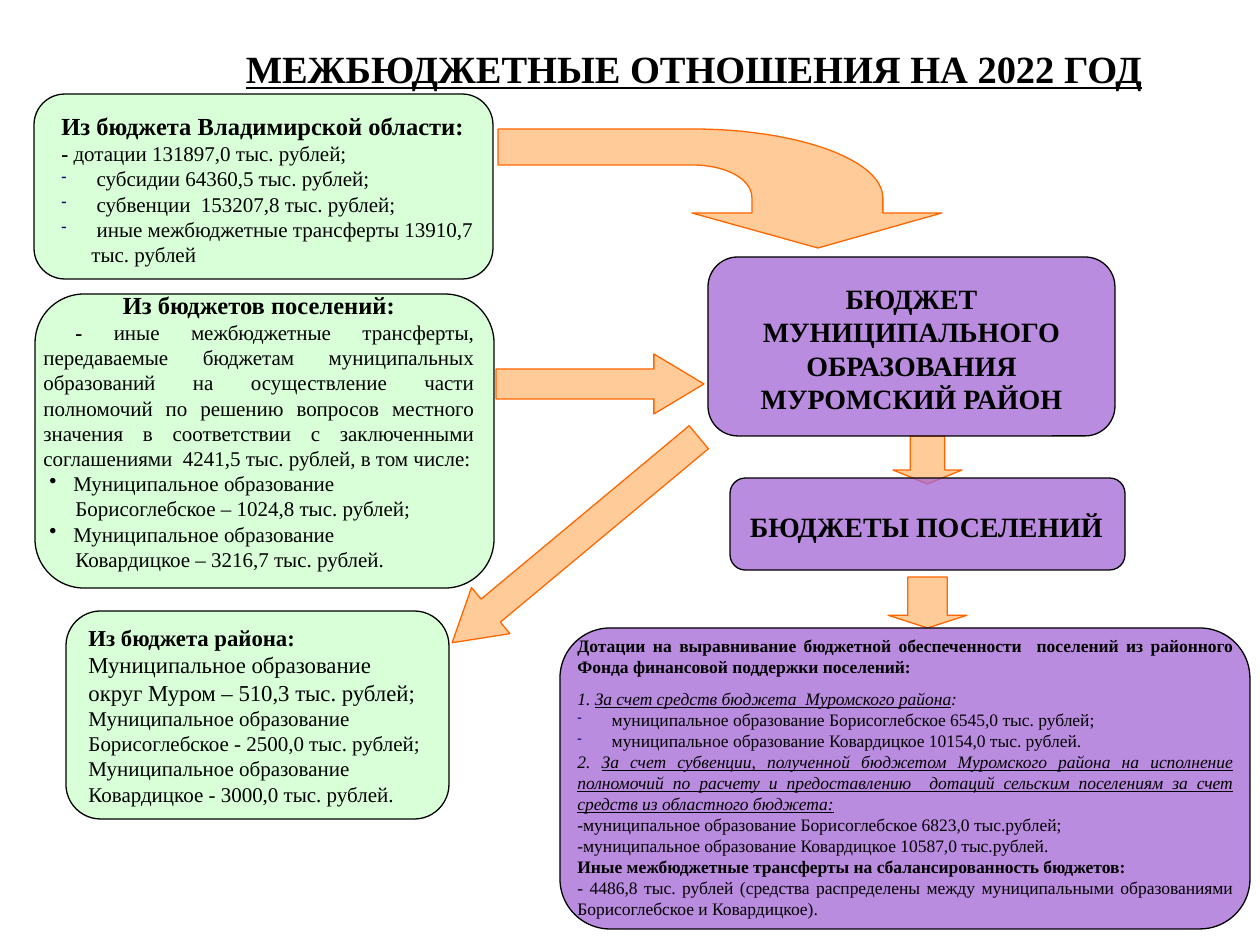
from dataclasses import dataclass
from lxml.etree import SubElement
from pptx import Presentation
from pptx.dml.color import RGBColor
from pptx.enum.shapes import MSO_SHAPE
from pptx.enum.text import MSO_ANCHOR, PP_ALIGN
from pptx.oxml.ns import qn
from pptx.util import Pt

PX = 914400 / 126  # EMU in one px


@dataclass(frozen=True)
class Theme:
    face: str = "Times New Roman"
    ink: str = "000000"
    green: str = "CCFFCC"
    violet: str = "A265D5"
    peach: str = "FFCC99"
    orange: str = "FF6600"
    mark: str = "00007D"
    title: int = 22
    main: int = 16
    head: int = 14
    sub: int = 13
    body: int = 12
    small: int = 10


T = Theme()
LEFT, MID, JUST = PP_ALIGN.LEFT, PP_ALIGN.CENTER, PP_ALIGN.JUSTIFY


@dataclass(frozen=True)
class Para:
    text: object  # a string, or (text, style) pairs
    size: int = T.body
    style: str = ""  # letters b, i, u
    align: object = LEFT
    margin: int = 0
    indent: int = 0
    bullet: str = ""
    before: int = 0


def px(n):
    return round(n * PX)


def rgb(code):
    return RGBColor.from_string(code)


def paint(shape, fill, line, alpha=100):
    shape.shadow.inherit = False
    shape.fill.solid()
    shape.fill.fore_color.rgb = rgb(fill)
    if alpha < 100:
        color = shape.fill._xPr.find(qn("a:solidFill"))[0]
        SubElement(color, qn("a:alpha")).set("val", str(alpha * 1000))
    shape.line.color.rgb = rgb(line)
    shape.line.width = Pt(0.75)


def mark(font, style):
    font.bold, font.italic, font.underline = (c in style for c in "biu")


def put_bullet(props, sign):
    if sign == "-":
        color = SubElement(props, qn("a:buClr"))
        SubElement(color, qn("a:srgbClr")).set("val", T.mark)
        SubElement(props, qn("a:buSzPct")).set("val", "75000")
    SubElement(props, qn("a:buChar")).set("char", sign)


def write(frame, paras):
    frame.word_wrap = True
    for n, item in enumerate(paras):
        par = frame.add_paragraph() if n else frame.paragraphs[0]
        props = par._p.get_or_add_pPr()
        props.set("marL", str(px(item.margin)))
        props.set("indent", str(px(item.indent)))
        if item.bullet:
            put_bullet(props, item.bullet)
        par.alignment = item.align
        if item.before:
            par.space_before = Pt(item.before)
        font = par.font
        font.name, font.size = T.face, Pt(item.size)
        font.color.rgb = rgb(T.ink)
        if isinstance(item.text, str):
            mark(font, item.style)
            par.add_run().text = item.text
            continue
        for text, style in item.text:
            run = par.add_run()
            run.text = text
            mark(run.font, style)


def add_text(slide, box, paras, anchor=MSO_ANCHOR.TOP):
    frame = slide.shapes.add_textbox(*map(px, box)).text_frame
    frame.vertical_anchor = anchor
    write(frame, paras)


def add_card(slide, box, fill):
    card = slide.shapes.add_shape(MSO_SHAPE.FLOWCHART_ALTERNATE_PROCESS, *map(px, box))
    paint(card, fill, T.ink, 74)
    return card


def add_arrow(slide, kind, box, head, turn=0):
    arrow = slide.shapes.add_shape(kind, *map(px, box))
    arrow.adjustments[0], arrow.adjustments[1] = 0.5, head
    arrow.rotation = turn
    paint(arrow, T.peach, T.orange)


def curve(a, b, c, d, steps=24):
    """Points of a cubic Bezier curve, after its start."""
    for n in range(1, steps + 1):
        t = n / steps
        s = 1 - t
        yield tuple(s**3 * i + 3 * s * s * t * j + 3 * s * t * t * k + t**3 * m
                    for i, j, k, m in zip(a, b, c, d))


def add_bend(slide):
    points = [(942, 213), (883, 213), (883, 198),
              *curve((883, 198), (883, 160), (798, 129), (692, 129)),
              (498, 129), (498, 165), (692, 165),
              *curve((692, 165), (726, 165), (752, 179), (752, 198)),
              (752, 213), (692, 213)]
    pen = slide.shapes.build_freeform(px(818), px(248))
    pen.add_line_segments([(px(x), px(y)) for x, y in points], close=True)
    paint(pen.convert_to_shape(), T.peach, T.orange)


def dash(text, **look):
    return Para(text, margin=30, indent=-30, bullet="-", **look)


def fine(text, style="", **look):
    return Para(text, T.small, style, JUST, **look)


def town(name, total):
    return [Para("Муниципальное образование", align=JUST, margin=30, indent=-24, bullet="•"),
            Para(f"{name} – {total} тыс. рублей", align=JUST, margin=32)]


def main():
    deck = Presentation()
    deck.slide_width, deck.slide_height = px(1260), px(945)
    slide = deck.slides.add_slide(deck.slide_layouts[6])

    # Arrows
    add_bend(slide)
    right, down = MSO_SHAPE.RIGHT_ARROW, MSO_SHAPE.DOWN_ARROW
    add_arrow(slide, right, (496, 354, 208, 60), 0.835)
    add_arrow(slide, right, (415, 510, 321, 60), 0.835, 140.2)
    add_arrow(slide, down, (893, 436, 69, 48), 0.29)
    add_arrow(slide, down, (888, 577, 79, 51), 0.25)

    # Cards
    for box in ((34, 94, 459, 185), (35, 294, 459, 294)):
        add_card(slide, box, T.green)
    for box in ((708, 257, 407, 179), (730, 478, 395, 92), (560, 628, 690, 301)):
        add_card(slide, box, T.violet)
    local = add_card(slide, (66, 611, 383, 208), T.green)

    # Title
    add_text(slide, (127, 32, 1134, 73),
             [Para("МЕЖБЮДЖЕТНЫЕ ОТНОШЕНИЯ НА 2022 ГОД", T.title, "bu", MID)],
             MSO_ANCHOR.MIDDLE)

    # Sources of funds
    add_text(slide, (49, 105, 442, 170), [
        Para("Из бюджета Владимирской области:", T.head, "b"),
        Para([("-", "b"), (" дотации 131897,0 тыс. рублей;", "")]),
        dash(" субсидии 64360,5 тыс. рублей;"),
        dash(" субвенции  153207,8 тыс. рублей;"),
        dash(" иные межбюджетные трансферты 13910,7 тыс. рублей"),
    ])
    first, second = town("Борисоглебское", "1024,8"), town("Ковардицкое", "3216,7")
    first[1] = Para(first[1].text + ";", align=JUST, margin=32)
    second[1] = Para(second[1].text + ".", align=JUST, margin=32)
    add_text(slide, (31, 284, 456, 297), [
        Para("Из бюджетов поселений:", T.head, "b", MID),
        Para([("-", "b"), (" иные межбюджетные трансферты, передаваемые бюджетам "
              "муниципальных образований на осуществление части полномочий по решению "
              "вопросов местного значения в соответствии с заключенными соглашениями  "
              "4241,5 тыс. рублей, в том числе:", "")], align=JUST, indent=32),
        *first, *second,
    ])
    frame = local.text_frame
    frame.margin_right = 0
    frame.vertical_anchor = MSO_ANCHOR.MIDDLE
    write(frame, [
        Para("Из бюджета района:", T.sub, "b"),
        Para("Муниципальное образование", T.sub),
        Para("округ Муром – 510,3 тыс. рублей;", T.sub),
        Para("Муниципальное образование"),
        Para("Борисоглебское - 2500,0 тыс. рублей;"),
        Para("Муниципальное образование"),
        Para("Ковардицкое - 3000,0 тыс. рублей."),
    ])

    # Budgets that receive them
    add_text(slide, (723, 275, 377, 139), [
        Para("БЮДЖЕТ МУНИЦИПАЛЬНОГО ОБРАЗОВАНИЯ МУРОМСКИЙ РАЙОН", T.main, "b", MID)])
    add_text(slide, (733, 503, 387, 44), [Para("БЮДЖЕТЫ ПОСЕЛЕНИЙ", T.main, "b", MID)])
    add_text(slide, (565, 629, 680, 316), [
        fine("Дотации на выравнивание бюджетной обеспеченности  поселений из районного "
             "Фонда финансовой поддержки поселений:", "b"),
        fine([("1. ", "i"), ("За счет средств бюджета  Муромского района", "iu"),
              (":", "i")], before=6),
        dash(" муниципальное образование Борисоглебское 6545,0 тыс. рублей;",
             size=T.small, align=JUST),
        dash(" муниципальное образование Ковардицкое 10154,0 тыс. рублей.",
             size=T.small, align=JUST),
        fine([("2. ", "i"), ("За счет субвенции, полученной бюджетом Муромского района на "
              "исполнение полномочий по расчету и предоставлению  дотаций сельским "
              "поселениям за счет средств из областного бюджета:", "iu")]),
        fine("-муниципальное образование Борисоглебское 6823,0 тыс.рублей;"),
        fine("-муниципальное образование Ковардицкое 10587,0 тыс.рублей."),
        fine("Иные межбюджетные трансферты на сбалансированность бюджетов:", "b"),
        fine("- 4486,8 тыс. рублей (средства распределены между муниципальными "
             "образованиями Борисоглебское и Ковардицкое)."),
    ])

    deck.save("out.pptx")


if __name__ == "__main__":
    main()
